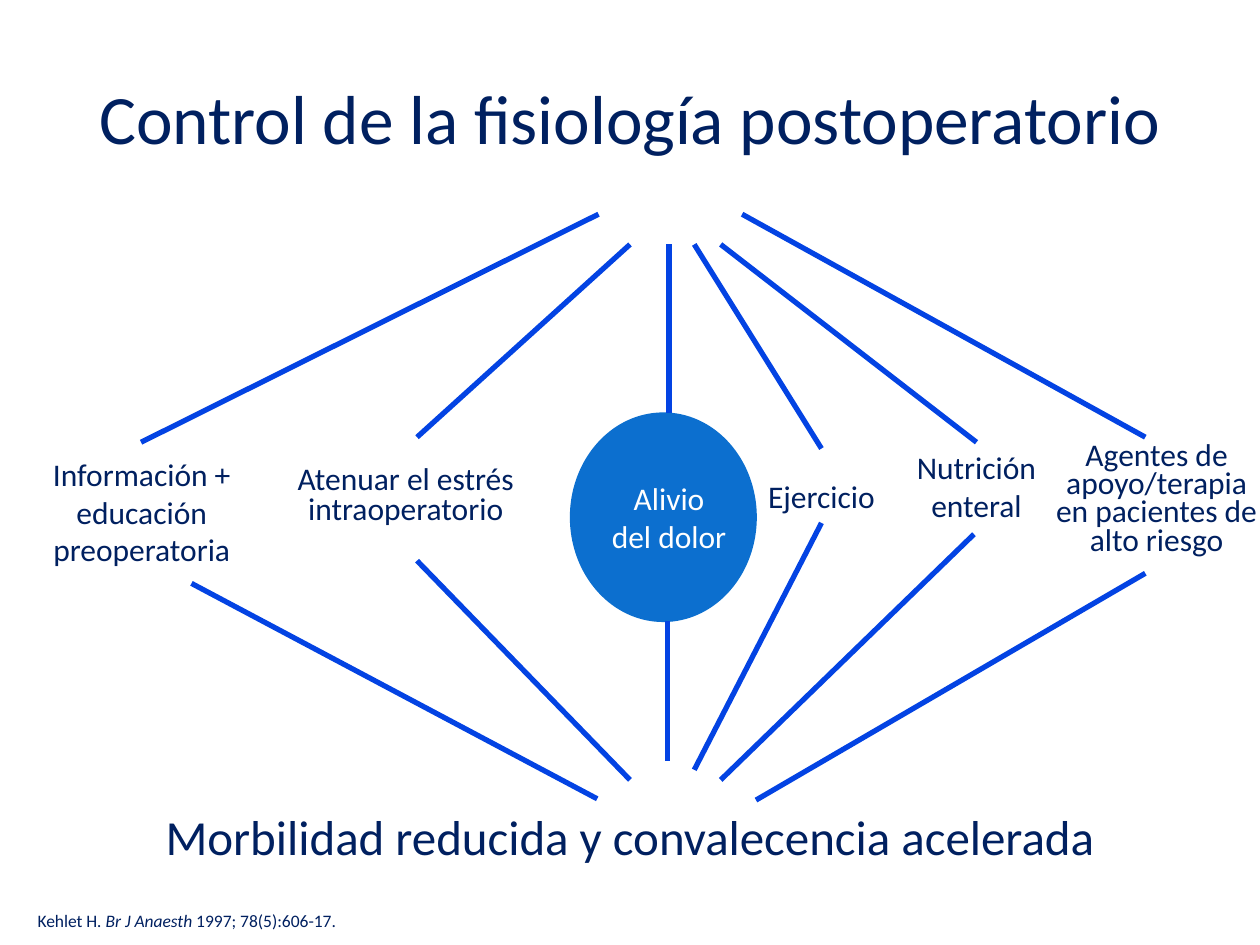
from dataclasses import dataclass

from lxml.etree import SubElement
from pptx import Presentation
from pptx.dml.color import RGBColor
from pptx.enum.shapes import MSO_CONNECTOR, MSO_SHAPE
from pptx.enum.text import MSO_ANCHOR, PP_ALIGN
from pptx.oxml.ns import qn
from pptx.util import Inches, Pt


@dataclass(frozen=True)
class Theme:
    font: str = "Calibri"
    navy: RGBColor = RGBColor(0x00, 0x20, 0x60)
    white: RGBColor = RGBColor(0xFF, 0xFF, 0xFF)
    disc: RGBColor = RGBColor(0x0C, 0x6F, 0xCF)
    ray: RGBColor = RGBColor(0x03, 0x43, 0xE3)
    title: float = 39.6
    outcome: float = 28
    label: float = 18
    citation: float = 10
    ray_width: float = 3


@dataclass(frozen=True)
class Box:
    """A text box; place is left, top, width, height in grid units."""
    runs: tuple
    place: tuple
    size: float
    color: RGBColor
    align: PP_ALIGN = PP_ALIGN.CENTER
    spacing: float = 1.0
    anchor: MSO_ANCHOR = MSO_ANCHOR.TOP
    wrap: bool = True
    side: float = 0.1


@dataclass(frozen=True)
class Ray:
    """A line between two (column, row) points."""
    start: tuple
    end: tuple


T = Theme()
COLS, ROWS = 10, 7.5
W, H = Inches(10), Inches(7.5)


def x(cols: float) -> int:
    return round(W * cols / COLS)


def y(rows: float) -> int:
    return round(H * rows / ROWS)


def area(place: tuple) -> tuple:
    left, top, width, height = place
    return x(left), y(top), x(width), y(height)


def set_all(target, values: dict) -> None:
    for name, value in values.items():
        setattr(target, name, value)


def add_box(s, box: Box) -> None:
    tf = s.shapes.add_textbox(*area(box.place)).text_frame
    set_all(tf, {"word_wrap": box.wrap, "vertical_anchor": box.anchor,
                 "margin_left": x(box.side), "margin_right": x(box.side)})
    p = tf.paragraphs[0]
    set_all(p, {"alignment": box.align, "line_spacing": box.spacing})
    for text, italic in box.runs:
        r = p.add_run()
        r.text = text
        set_all(r.font, {"name": T.font, "size": Pt(box.size), "italic": italic})
        r.font.color.rgb = box.color


def add_ray(s, ray: Ray) -> None:
    (x1, y1), (x2, y2) = ray.start, ray.end
    sp = s.shapes.add_connector(MSO_CONNECTOR.STRAIGHT, x(x1), y(y1), x(x2), y(y2))
    sp.line.color.rgb = T.ray
    sp.line.width = Pt(T.ray_width)
    SubElement(sp._element.spPr, qn("a:effectLst"))


def add_disc(s, place: tuple) -> None:
    sp = s.shapes.add_shape(MSO_SHAPE.OVAL, *area(place))
    sp.shadow.inherit = False
    sp.fill.solid()
    sp.fill.fore_color.rgb = T.disc
    sp.line.color.rgb = T.disc
    sp.line.width = Pt(1)


def label(text: str, place: tuple, color: RGBColor = T.navy, **layout) -> Box:
    return Box(((text, False),), place, T.label, color, **layout)


# Interventions, left to right
LABELS = (
    label("Información + educación preoperatoria", (0.2, 3.56, 1.85, 1.01)),
    label("Atenuar el estrés intraoperatorio", (2.17, 3.65, 2.1, 0.59), spacing=0.8),
    label("Alivio del dolor", (4.75, 3.75, 1.12, 0.71), T.white),
    label("Ejercicio", (5.89, 3.74, 1.26, 0.4)),
    label("Nutrición enteral", (6.91, 3.51, 1.68, 0.71)),
    label("Agentes de apoyo/terapia en pacientes de alto riesgo",
          (8.21, 3.47, 1.94, 1.02), spacing=0.75, side=0.14),
)

# Heading, outcome and citation
FRAME = (
    Box((("Control de la fisiología postoperatorio", False),), (0.5, 0.3, 9, 1.25),
        T.title, T.navy, anchor=MSO_ANCHOR.MIDDLE),
    Box((("Morbilidad reducida y convalecencia acelerada", False),),
        (0, 6.35, 10, 0.57), T.outcome, T.navy),
    Box((("Kehlet H", False), (". Br J Anaesth ", True), ("1997; 78(5):606-17.", False)),
        (0.2, 7.17, 2.64, 0.27), T.citation, T.navy, align=PP_ALIGN.LEFT, wrap=False),
)

# Rays from the heading down to each label, then from each label to the outcome
RAYS = (
    Ray((4.75, 1.7), (1.12, 3.51)),
    Ray((5, 1.94), (3.31, 3.47)),
    Ray((5.31, 1.94), (5.31, 3.28)),
    Ray((5.51, 1.94), (6.52, 3.56)),
    Ray((5.72, 1.94), (7.75, 3.51)),
    Ray((5.89, 1.7), (9.09, 3.47)),
    Ray((1.52, 4.63), (4.74, 6.34)),
    Ray((3.31, 4.45), (5, 6.19)),
    Ray((5.3, 4.93), (5.3, 6.04)),
    Ray((6.52, 4.15), (5.51, 6.11)),
    Ray((7.73, 4.24), (5.72, 6.19)),
    Ray((9.09, 4.55), (6, 6.35)),
)


def main() -> None:
    prs = Presentation()
    set_all(prs, {"slide_width": W, "slide_height": H})
    s = prs.slides.add_slide(prs.slide_layouts[6])
    add_disc(s, (4.53, 3.28, 1.47, 1.65))
    for box in FRAME + LABELS:
        add_box(s, box)
    for ray in RAYS:
        add_ray(s, ray)
    prs.save("out.pptx")


if __name__ == "__main__":
    main()
